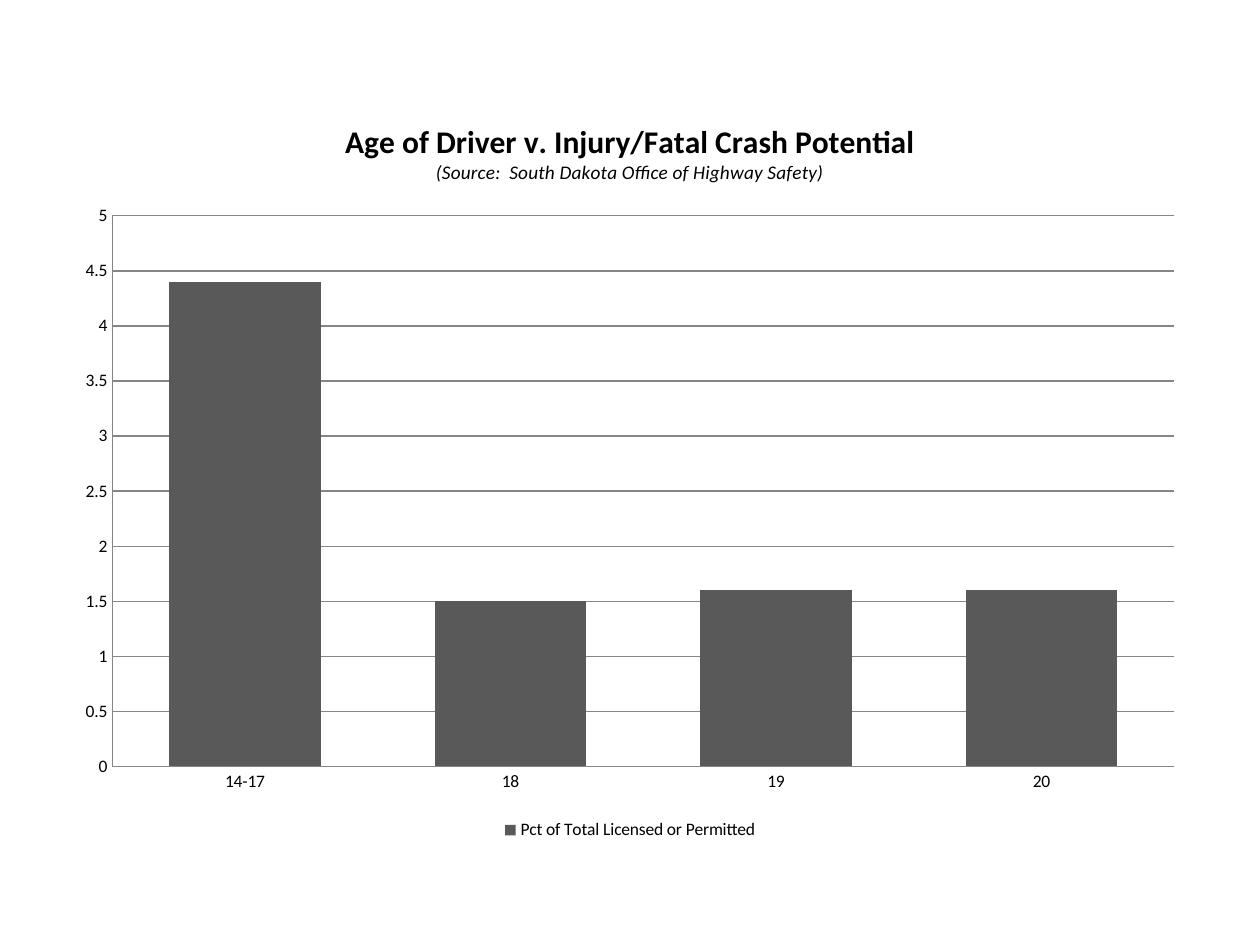
from pptx import Presentation
from pptx.chart.data import CategoryChartData
from pptx.dml.color import RGBColor
from pptx.enum.chart import XL_CHART_TYPE, XL_LEGEND_POSITION, XL_TICK_MARK
from pptx.util import Inches, Pt

PX = Inches(1) // 126
FONT = "Calibri"
BLACK, GRID, BAR = "000000", "868686", "595959"
CRASH_PCT = {"14-17": 4.4, "18": 1.5, "19": 1.6, "20": 1.6}


def color(hex_value):
    return RGBColor.from_string(hex_value)


def style_font(font, size, bold=False, italic=False):
    font.name = FONT
    font.size = Pt(size)
    font.bold = bold
    font.italic = italic
    font.color.rgb = color(BLACK)


def style_line(line):
    line.color.rgb = color(GRID)
    line.width = Pt(0.75)


def add_crash_chart(slide, left, top, width, height):
    data = CategoryChartData()
    data.categories = list(CRASH_PCT)
    data.add_series("Pct of Total Licensed or Permitted", CRASH_PCT.values())
    box = (length * PX for length in (left, top, width, height))
    chart = slide.shapes.add_chart(XL_CHART_TYPE.COLUMN_CLUSTERED, *box, data).chart
    style_font(chart.font, 10)
    return chart


def set_title(chart):
    heading = chart.chart_title.text_frame
    heading.text = "Age of Driver v. Injury/Fatal Crash Potential"
    style_font(heading.paragraphs[0].font, 18, bold=True)
    source = heading.add_paragraph()
    source.text = "(Source:  South Dakota Office of Highway Safety)"
    style_font(source.font, 11, italic=True)
    chart.chart_title.include_in_layout = False


def style_columns(chart):
    plot = chart.plots[0]
    plot.gap_width = 75
    plot.overlap = -25
    plot.vary_by_categories = False
    fill = plot.series[0].format.fill
    fill.solid()
    fill.fore_color.rgb = color(BAR)


def style_axes(chart):
    for axis in (chart.category_axis, chart.value_axis):
        axis.major_tick_mark = XL_TICK_MARK.NONE
        axis.minor_tick_mark = XL_TICK_MARK.NONE
        style_line(axis.format.line)
    values = chart.value_axis
    values.minimum_scale, values.maximum_scale, values.major_unit = 0, 5, 0.5
    values.has_major_gridlines = True
    style_line(values.major_gridlines.format.line)


def set_legend(chart):
    chart.has_legend = True
    chart.legend.position = XL_LEGEND_POSITION.BOTTOM
    chart.legend.include_in_layout = False


def main():
    deck = Presentation()
    deck.slide_width, deck.slide_height = Inches(10), Inches(7.5)
    slide = deck.slides.add_slide(deck.slide_layouts[6])
    chart = add_crash_chart(slide, 63, 95, 1134, 750)
    set_title(chart)
    style_columns(chart)
    style_axes(chart)
    set_legend(chart)
    deck.save("out.pptx")


if __name__ == "__main__":
    main()
